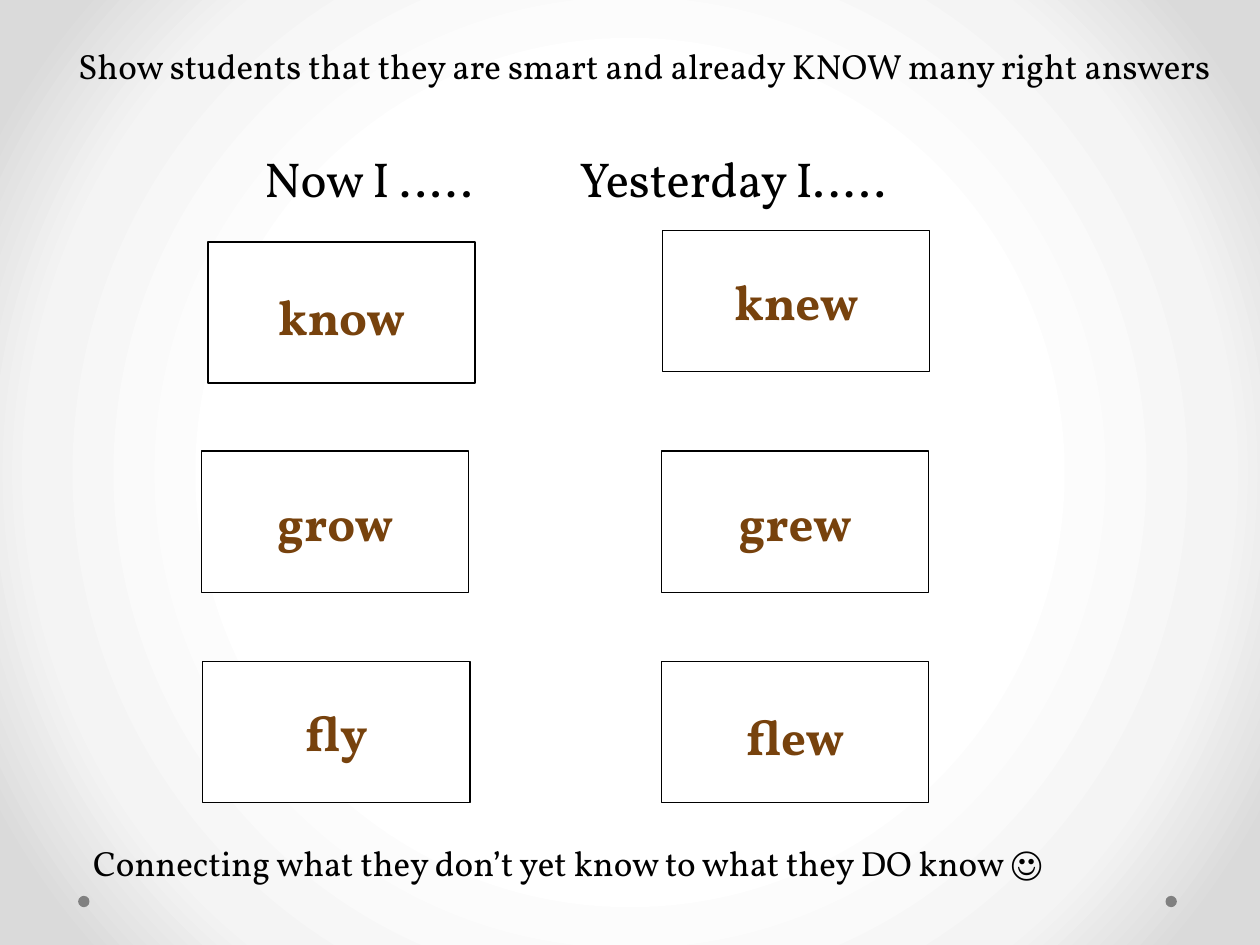
from pptx import Presentation
from pptx.dml.color import RGBColor
from pptx.enum import shapes, text
from pptx.oxml import parse_xml
from pptx.oxml.ns import nsdecls, qn
from pptx.util import Inches, Pt

FONT = "Vollkorn"
TITLE = "Show students that they are smart and already KNOW many right answers"
HEADINGS = "Now I …..\t\tYesterday I….."
CLOSING = "Connecting what they don’t yet know to what they DO know ☺"

# word, left, top, extra space above the word
CARDS = [
    ("know", 1.65, 1.92, 0.05),
    ("knew", 5.26, 1.83, 0),
    ("grow", 1.6, 3.58, 0),
    ("grew", 5.25, 3.58, 0),
    ("fly", 1.61, 5.25, 0),
    ("flew", 5.25, 5.25, 0.06),
]
CARD_SIZE = (2.12, 1.12)
DOT_LEFTS = (9.25, 0.62)
DOT_TOP, DOT_SIZE = 7.11, 0.09
BACKGROUND_STOPS = [(50, "FFFFFF"), (76, "F4F4F4"), (92, "DADADA")]


def color(hex_code):
    return RGBColor.from_string(hex_code)


def paint_background(page):
    """Fill the page with a circular gradient from its centre."""
    stops = "".join(
        f'<a:gs pos="{pos * 1000}"><a:srgbClr val="{code}"/></a:gs>'
        for pos, code in BACKGROUND_STOPS
    )
    gradient = parse_xml(
        f'<a:gradFill {nsdecls("a")} rotWithShape="1"><a:gsLst>{stops}</a:gsLst>'
        '<a:path path="circle"><a:fillToRect l="50000" t="50000" r="50000" b="50000"/>'
        "</a:path></a:gradFill>"
    )
    page.background.fill.solid()
    solid = next(page.background._cSld.iter(qn("a:solidFill")))
    solid.getparent().replace(solid, gradient)


def write(box, words, size, code="000000", bold=False, align=text.PP_ALIGN.LEFT):
    frame = box.text_frame
    frame.text = words
    para = frame.paragraphs[0]
    para.alignment = align
    font = para.runs[0].font
    font.name, font.size, font.bold = FONT, Pt(size), bold
    font.color.rgb = color(code)


def write_line(box, place, words, size):
    """Set one unwrapped line of text in a box at the given place."""
    box.left, box.top, box.width, box.height = map(Inches, place)
    write(box, words, size)
    frame = box.text_frame
    frame.word_wrap = False
    frame.auto_size = text.MSO_AUTO_SIZE.SHAPE_TO_FIT_TEXT
    frame.vertical_anchor = text.MSO_ANCHOR.TOP


def add_filled(page, kind, place, code):
    shape = page.shapes.add_shape(kind, *map(Inches, place))
    shape.shadow.inherit = False
    shape.fill.solid()
    shape.fill.fore_color.rgb = color(code)
    shape.line.fill.background()
    return shape


def add_card(page, word, left, top, drop):
    card = add_filled(page, shapes.MSO_SHAPE.RECTANGLE, (left, top, *CARD_SIZE), "FFFFFF")
    card.line.color.rgb = color("000000")
    card.line.width = Pt(0.75)
    write(card, word, 28, "77420D", True, text.PP_ALIGN.CENTER)
    card.text_frame.vertical_anchor = text.MSO_ANCHOR.MIDDLE
    card.text_frame.margin_top = Inches(0.05 + drop)


def main():
    deck = Presentation()
    deck.slide_width, deck.slide_height = Inches(10), Inches(7.5)
    page = deck.slides.add_slide(deck.slide_layouts[5])
    paint_background(page)

    for left in DOT_LEFTS:
        add_filled(page, shapes.MSO_SHAPE.OVAL, (left, DOT_TOP, DOT_SIZE, DOT_SIZE), "808080")
    for card in CARDS:
        add_card(page, *card)

    write_line(page.shapes.title, (0.52, 0.3, 9.53, 0.44), TITLE, 20)
    for place, words, size in [
        ((0.64, 6.63, 8.09, 0.44), CLOSING, 20),
        ((2, 1.13, 5.76, 0.57), HEADINGS, 28),
    ]:
        write_line(page.shapes.add_textbox(0, 0, 0, 0), place, words, size)

    deck.save("out.pptx")


if __name__ == "__main__":
    main()
